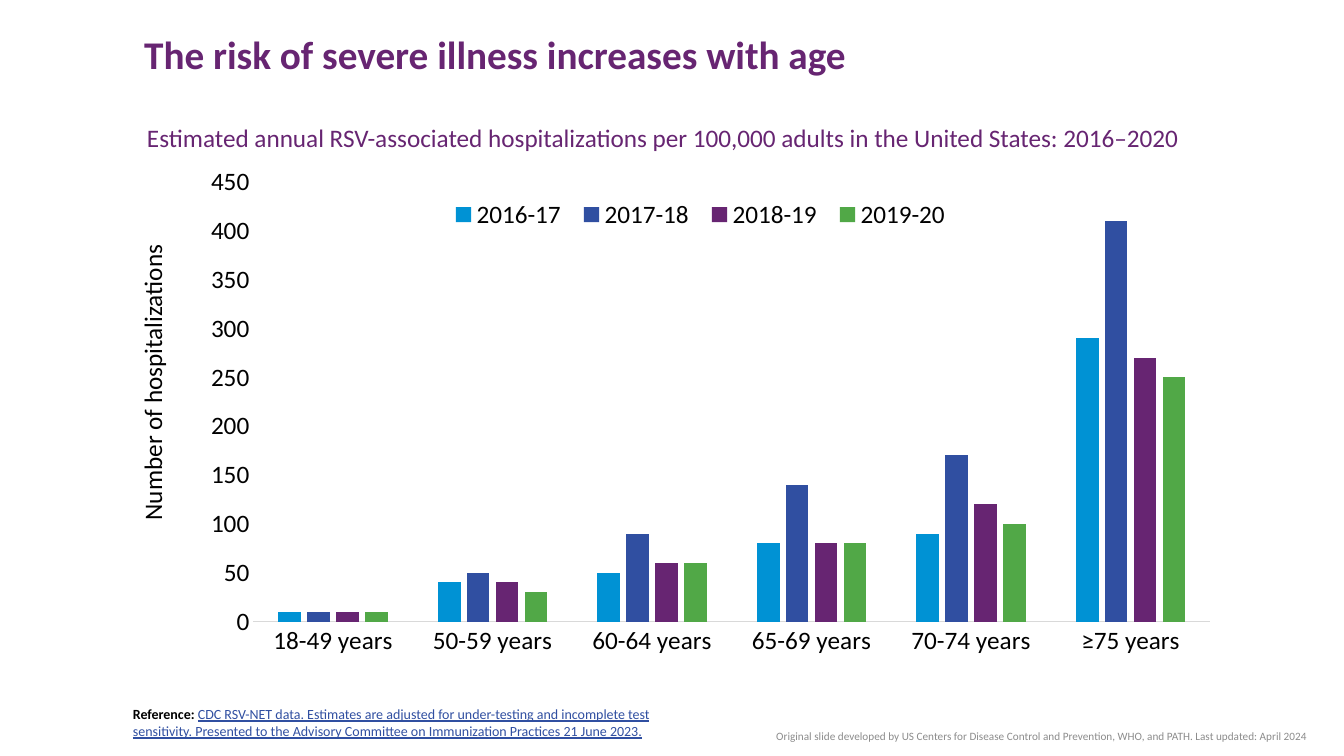
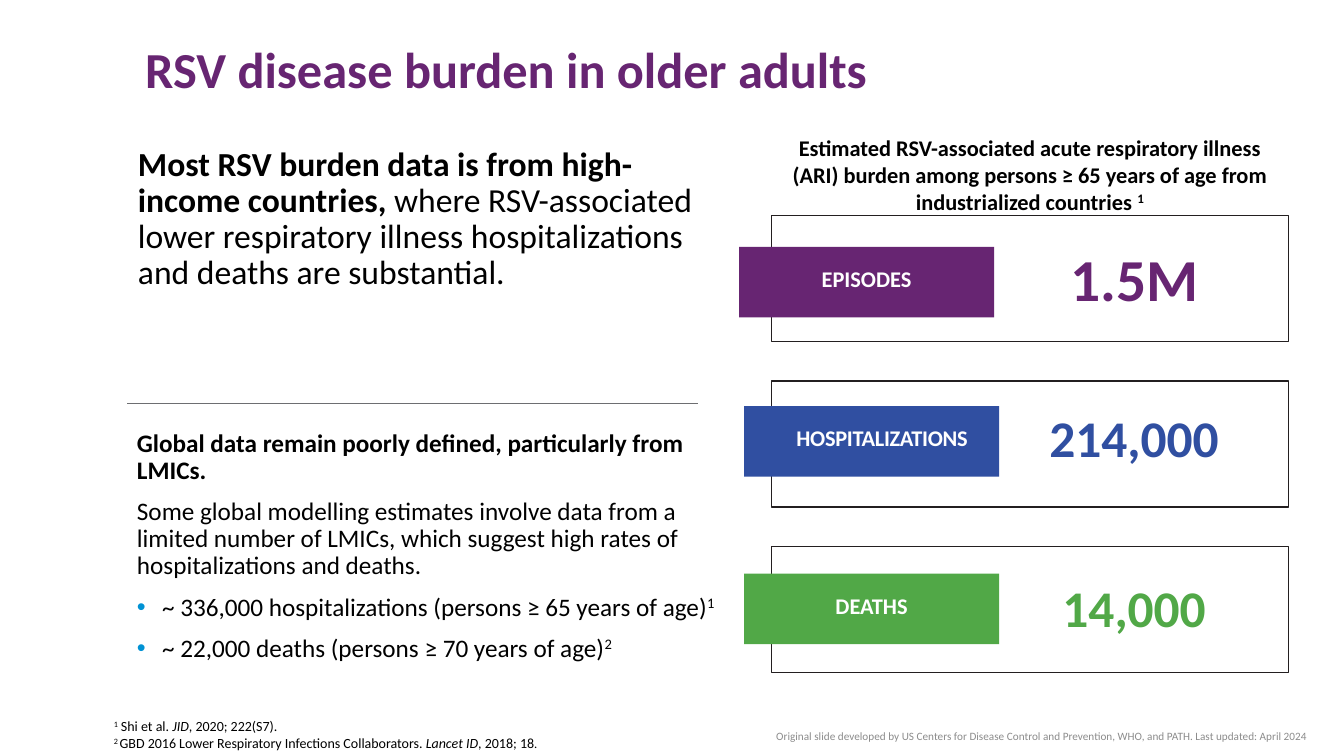
import pptx
import pptx.chart.data
import pptx.dml.color
import pptx.enum.chart
import pptx.enum.shapes
import pptx.enum.text
import pptx.oxml
import pptx.oxml.ns
import pptx.util

Inches = pptx.util.Inches
Pt = pptx.util.Pt
Align = pptx.enum.text.PP_ALIGN
Anchor = pptx.enum.text.MSO_ANCHOR

FONT = "Calibri"
BLACK, WHITE, GRAY, RULE, FRAME = "000000", "FFFFFF", "8C8C8C", "6D6E71", "231F20"
CYAN, BLUE, PURPLE, GREEN = "0092D4", "304FA1", "672572", "51A847"
CREDIT = ("Original slide developed by US Centers for Disease Control and "
          "Prevention, WHO, and PATH. Last updated: April 2024")


def rgb(value):
    return pptx.dml.color.RGBColor.from_string(value)


def style_font(font, size, color, bold=False):
    font.name = FONT
    font.size = Pt(size)
    font.bold = bold
    font.color.rgb = rgb(color)


def write(para, spans, size, color=BLACK, align=Align.LEFT, spacing=None, before=0):
    """Add (text, marks[, colour]) spans.

    Marks: b bold, i italic, u underline, ^ raised, - one point smaller, t tight.
    """
    para.alignment = align
    para.space_before = Pt(before)
    if spacing:
        para.line_spacing = spacing
    for text, marks, *own_color in spans:
        span = para.add_run()
        span.text = text
        style_font(span.font, size - ("-" in marks),
                   own_color[0] if own_color else color, "b" in marks)
        if "i" in marks:
            span.font.italic = True
        if "u" in marks:
            span.font.underline = True
        if "^" in marks:
            span.font._element.set("baseline", "30000")
        if "t" in marks:
            span.font._element.set("spc", "-20")


def add_text(page, box, paragraphs, size, anchor=Anchor.TOP, before=0, **style):
    """Add a wrapping text box holding one paragraph per list of spans."""
    frame = page.shapes.add_textbox(*map(Inches, box)).text_frame
    frame.word_wrap = True
    frame.vertical_anchor = anchor
    for index, spans in enumerate(paragraphs):
        para = frame.add_paragraph() if index else frame.paragraphs[0]
        write(para, spans, size, before=before if index else 0, **style)
    return frame


def add_bullet(para):
    properties = para._p.get_or_add_pPr()
    properties.set("marL", str(Inches(0.25)))
    properties.set("indent", str(-Inches(0.25)))
    namespace = pptx.oxml.ns.nsdecls("a")
    for xml in (f'<a:buClr {namespace}><a:srgbClr val="{CYAN}"/></a:buClr>',
                f'<a:buFont {namespace} typeface="Arial"/>',
                f'<a:buChar {namespace} char="•"/>'):
        properties.append(pptx.oxml.parse_xml(xml))


def add_rectangle(page, box, fill=None, line=None):
    shape = page.shapes.add_shape(
        pptx.enum.shapes.MSO_SHAPE.RECTANGLE, *map(Inches, box))
    shape.shadow.inherit = False
    if fill:
        shape.fill.solid()
        shape.fill.fore_color.rgb = rgb(fill)
    else:
        shape.fill.background()
    if line:
        shape.line.color.rgb = rgb(line)
        shape.line.width = Pt(0.92)
    else:
        shape.line.fill.background()
    return shape


def add_rule(page, left, top, width):
    rule = page.shapes.add_connector(
        pptx.enum.shapes.MSO_CONNECTOR.STRAIGHT,
        Inches(left), Inches(top), Inches(left + width), Inches(top))
    rule.line.color.rgb = rgb(RULE)
    rule.line.width = Pt(0.5)
    rule._element.spPr.append(
        pptx.oxml.parse_xml(f'<a:effectLst {pptx.oxml.ns.nsdecls("a")}/>'))


def add_page(deck, title, box, size):
    """Add a title-only page with its title and the credit line."""
    page = deck.slides.add_slide(deck.slide_layouts[5])
    holder = page.shapes.title
    holder.left, holder.top, holder.width, holder.height = map(Inches, box)
    frame = holder.text_frame
    frame.auto_size = pptx.enum.text.MSO_AUTO_SIZE.NONE
    frame.vertical_anchor = Anchor.TOP
    write(frame.paragraphs[0], [(title, "b")], size, PURPLE, spacing=0.9)
    add_text(page, (7.2, 7.18, 5.87, 0.24), [[(CREDIT, "")]], 8, Anchor.MIDDLE,
             color=GRAY, align=Align.RIGHT)
    return page


def set_layout(parent, index, left, top, width, height, inner=False):
    """Fix a chart part at fractions of the chart area."""
    for old in parent.findall(pptx.oxml.ns.qn("c:layout")):
        parent.remove(old)
    target = '<c:layoutTarget val="inner"/>' if inner else ""
    modes = '<c:xMode val="edge"/><c:yMode val="edge"/>'
    sizes = "".join(f'<c:{name} val="{value}"/>' for name, value in
                    zip("xywh", (left, top, width, height)))
    parent.insert(index, pptx.oxml.parse_xml(
        f'<c:layout {pptx.oxml.ns.nsdecls("c")}><c:manualLayout>'
        f'{target}{modes}{sizes}</c:manualLayout></c:layout>'))


def add_hospitalization_chart(page, box):
    data = pptx.chart.data.CategoryChartData()
    data.categories = ["18-49 years", "50-59 years", "60-64 years",
                       "65-69 years", "70-74 years", "≥75 years"]
    seasons = [("2016-17", (10, 40, 50, 80, 90, 290), CYAN),
               ("2017-18", (10, 50, 90, 140, 170, 410), BLUE),
               ("2018-19", (10, 40, 60, 80, 120, 270), PURPLE),
               ("2019-20", (10, 30, 60, 80, 100, 250), GREEN)]
    for name, values, _ in seasons:
        data.add_series(name, values)
    chart = page.shapes.add_chart(
        pptx.enum.chart.XL_CHART_TYPE.COLUMN_CLUSTERED, *map(Inches, box), data).chart
    chart.has_title = False
    style_font(chart.font, 18, BLACK)

    plot = chart.plots[0]
    plot.gap_width, plot.overlap = 219, -27
    plot.vary_by_categories = False
    for series, (_, _, color) in zip(plot.series, seasons):
        series.format.fill.solid()
        series.format.fill.fore_color.rgb = rgb(color)

    for axis in (chart.category_axis, chart.value_axis):
        axis.has_major_gridlines = False
        axis.major_tick_mark = axis.minor_tick_mark = pptx.enum.chart.XL_TICK_MARK.NONE
        style_font(axis.tick_labels.font, 18, BLACK)
    chart.category_axis.format.line.color.rgb = rgb("D9D9D9")
    chart.category_axis.format.line.width = Pt(0.75)
    chart.value_axis.format.line.fill.background()
    chart.value_axis.minimum_scale, chart.value_axis.maximum_scale = 0, 450
    chart.value_axis.major_unit = 50

    chart.has_legend = True
    legend = chart.legend
    legend.position = pptx.enum.chart.XL_LEGEND_POSITION.TOP
    legend.include_in_layout = False
    style_font(legend.font, 18, BLACK)
    set_layout(legend._element, 1, 0.29, 0.05, 0.455, 0.076)
    plot_area = chart._chartSpace.xpath("c:chart/c:plotArea")[0]
    set_layout(plot_area, 0, 0.125, 0.026, 0.84, 0.826, inner=True)


def build_risk_page(deck):
    page = add_page(deck, "The risk of severe illness increases with age",
                    (1.33, 0.3, 11.5, 0.59), 28)
    add_text(page, (1.22, 6.95, 5.66, 0.44), [[
        ("Reference: ", "b"),
        ("CDC RSV-NET data. Estimates are adjusted for under-testing and incomplete "
         "test sensitivity. Presented to the Advisory Committee on Immunization "
         "Practices 21 June 2023.", "u", BLUE)]], 10)
    add_hospitalization_chart(page, (1.1, 1.65, 11.3, 5.3))
    add_text(page, (1.36, 1.16, 11.04, 0.4), [[
        ("Estimated annual RSV-associated hospitalizations per 100,000 adults "
         "in the United States: 2016–2020", "")]], 18, color=PURPLE)
    axis_title = add_text(page, (1.31, 1.65, 0.5, 4.29),
                          [[("Number of hospitalizations", "")]], 18,
                          align=Align.CENTER)
    axis_title._txBody.bodyPr.set("vert", "vert270")


def add_burden_text(page, left, top):
    add_text(page, (left + 0.01, top, 5.86, 2.46), [[
        ("Most RSV burden data is from high-income countries, ", "b"),
        ("where RSV-associated lower respiratory illness hospitalizations "
         "and deaths are substantial.", "")]], 24, spacing=0.9)
    add_rule(page, left, top + 2.59, 5.66)
    estimates = add_text(page, (left, top + 2.81, 5.95, 2.43), [
        [("Global data remain poorly defined, particularly from LMICs.", "b")],
        [("Some global modelling estimates involve data from a limited number of "
          "LMICs, which suggest high rates of hospitalizations and deaths.", "")],
        [("~ 336,000 hospitalizations (persons ≥ 65 years of age)", ""), ("1", "^")],
        [("~ 22,000 deaths (persons ≥ 70 years of age)", ""), ("2", "^")],
    ], 18, spacing=0.9, before=10)
    for para in estimates.paragraphs[2:]:
        add_bullet(para)


def add_burden_card(page, left, top, card):
    """Draw a frame with a coloured tag over its left edge and a large figure."""
    (label, marks, value, color, size, line_height,
     tag_left, tag_top, value_top, align, inset) = card
    add_rectangle(page, (left, top, 5.13, 1.25), line=FRAME)
    tag = add_rectangle(page, (left + tag_left, top + tag_top, 2.53, 0.7), fill=color)
    frame = tag.text_frame
    frame.margin_left = frame.margin_top = frame.margin_bottom = 0
    frame.margin_right = Inches(inset)
    frame.vertical_anchor = Anchor.MIDDLE
    write(frame.paragraphs[0], [(label, marks)], 16, WHITE, align, Pt(13.8))
    figure = add_text(page, (left + 2.25, top + value_top, 2.7, 0.65),
                      [[(value, "b")]], size, color=color, align=Align.CENTER,
                      spacing=Pt(line_height))
    figure.margin_left = figure.margin_right = figure.margin_bottom = 0
    figure.margin_top = Inches(0.01)


def add_burden_cards(page, left, top):
    add_text(page, (left, top, 5.13, 0.91), [[
        ("Estimated RSV-associated acute respiratory illness (ARI) burden among "
         "persons ≥ 65 years of age from industrialized countries ", "b"),
        ("1", "b^")]], 16, align=Align.CENTER)
    cards = [
        ("EPISODES", "b", "1.5M", PURPLE, 42.5, 49.5,
         -0.32, 0.31, 0.27, Align.CENTER, 0),
        ("HOSPITALIZATIONS", "bt", "214,000", BLUE, 36.7, 42.4,
         -0.27, 0.25, 0.26, Align.RIGHT, 0.31),
        ("DEATHS", "b", "14,000", GREEN, 36.7, 42.4,
         -0.27, 0.27, 0.31, Align.CENTER, 0),
    ]
    for index, card in enumerate(cards):
        add_burden_card(page, left, top + 0.86 + index * 1.64, card)


def build_burden_page(deck):
    page = add_page(deck, "RSV disease burden in older adults",
                    (1.34, 0.4, 11.5, 0.56), 36)
    add_burden_text(page, 1.26, 1.41)
    add_burden_cards(page, 7.65, 1.28)
    add_text(page, (1.03, 7.07, 6.55, 0.43), [
        [("1", "^"), (" Shi et al. ", ""), ("JID", "i"), (", 2020; 222(S7).", "")],
        [("2 ", "^"), ("GBD 2016 Lower Respiratory Infections Collaborators. ", ""),
         ("Lancet ID", "i"), (", 2018; 18", ""), (".", "-")],
    ], 10)


def main():
    deck = pptx.Presentation()
    deck.slide_width, deck.slide_height = Inches(13.33), Inches(7.5)
    build_risk_page(deck)
    build_burden_page(deck)
    deck.save("out.pptx")


if __name__ == "__main__":
    main()
